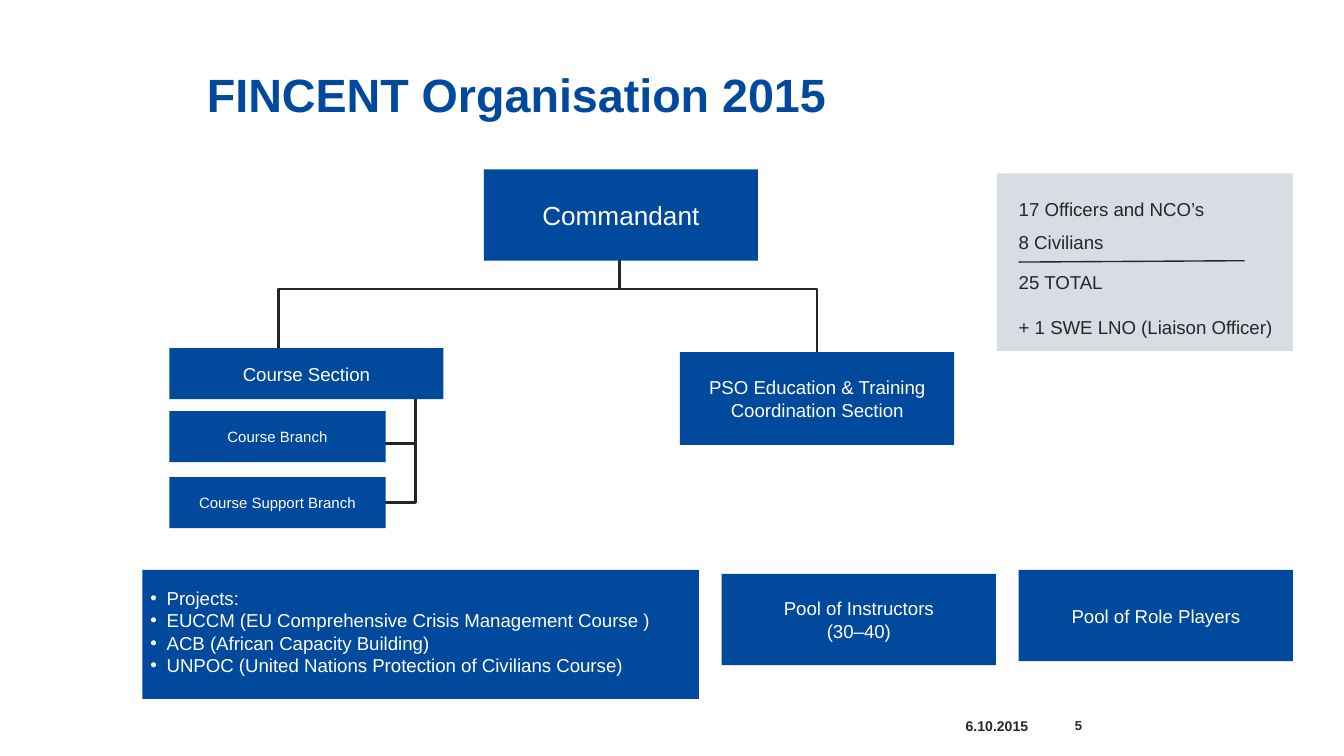
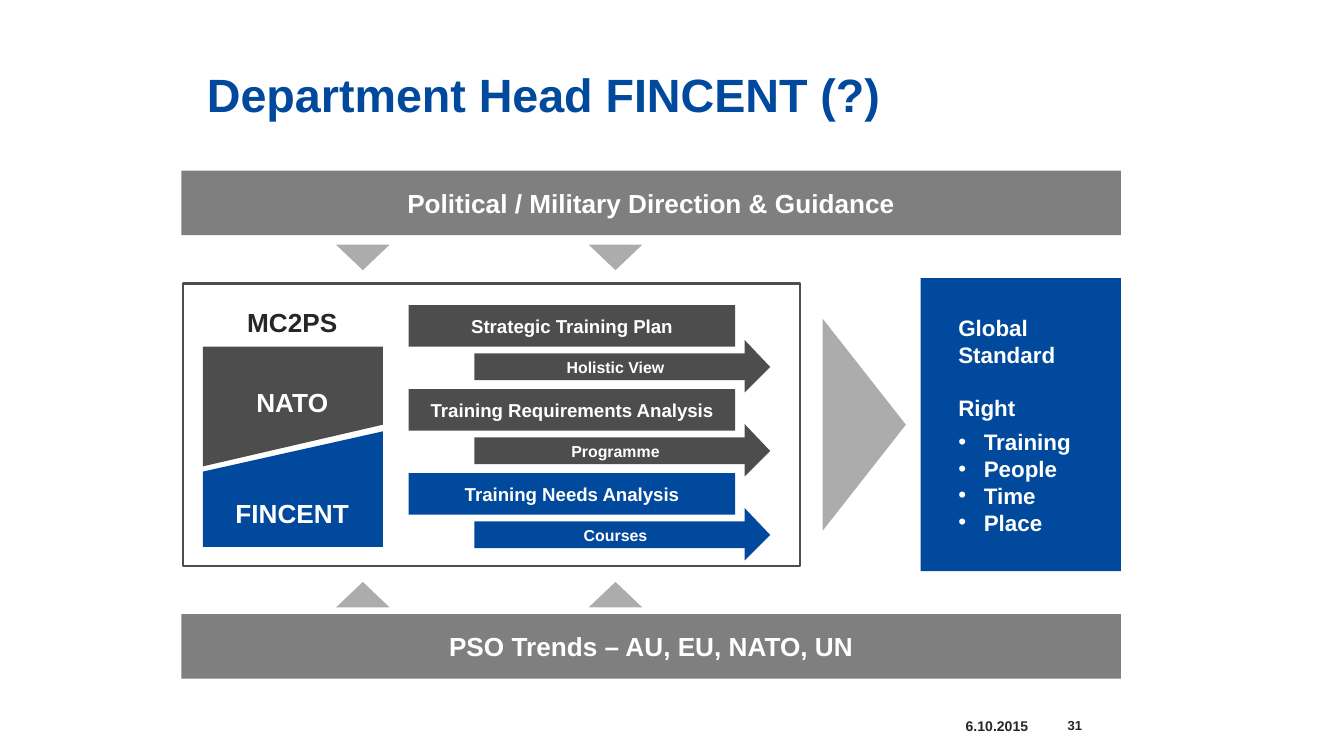
"""Build the two FINCENT slides: the organisation chart and the department head model."""
from lxml import etree
from pptx import Presentation
from pptx.dml.color import RGBColor
from pptx.enum.shapes import MSO_CONNECTOR, MSO_SHAPE
from pptx.enum.text import MSO_ANCHOR, MSO_AUTO_SIZE, PP_ALIGN
from pptx.oxml.ns import qn
from pptx.util import Inches, Pt

RECTANGLE = MSO_SHAPE.RECTANGLE
STRAIGHT = MSO_CONNECTOR.STRAIGHT
MIDDLE = MSO_ANCHOR.MIDDLE
FIXED = MSO_AUTO_SIZE.NONE
LEFT, CENTER, RIGHT = PP_ALIGN.LEFT, PP_ALIGN.CENTER, PP_ALIGN.RIGHT

FONT = "Arial"
BLUE, WHITE, INK = "01499C", "FFFFFF", "262626"
PANEL, BAND, DARK, ARROW = "D8DDE4", "7F7F7F", "4D4D4D", "ACACAC"
LINE_WIDTH = 1.42
DATE = "6.10.2015"


def color(value):
    """Turn a hex string into a colour."""
    return RGBColor.from_string(value)


def place(shape, left, top, width, height):
    """Move and size a shape."""
    shape.left, shape.top = Inches(left), Inches(top)
    shape.width, shape.height = Inches(width), Inches(height)


def paint(shape, fill):
    """Give a shape a plain fill without outline or shadow."""
    shape.shadow.inherit = False
    shape.fill.solid()
    shape.fill.fore_color.rgb = color(fill)
    shape.line.fill.background()


def stroke(line, width, value):
    """Set the width and colour of a line."""
    line.width = Pt(width)
    line.color.rgb = color(value)


def write(shape, lines, size, ink=WHITE, bold=False, align=CENTER, insets=(0.1, 0, 0.1, 0)):
    """Fill a shape with evenly formatted paragraphs and return them."""
    frame = shape.text_frame
    frame.text = "\n".join(lines)
    frame.word_wrap = True
    frame.auto_size = FIXED
    frame.vertical_anchor = MIDDLE
    frame.margin_left, frame.margin_top, frame.margin_right, frame.margin_bottom = map(Inches, insets)
    for para in frame.paragraphs:
        para.alignment = align
        para.space_before = Pt(0)
        for span in para.runs:
            span.font.name = FONT
            span.font.size = Pt(size)
            span.font.bold = bold
            span.font.color.rgb = color(ink)
    return frame.paragraphs


def set_bullet(para, indent):
    """Give a paragraph a hanging bullet, or none when the indent is zero."""
    properties = para._p.get_or_add_pPr()
    properties.set("marL", str(Inches(indent)))
    properties.set("indent", str(-Inches(indent)))
    if indent:
        etree.SubElement(properties, qn("a:buChar")).set("char", "•")
    else:
        etree.SubElement(properties, qn("a:buNone"))


def add_box(page, area, fill, lines=(), size=10, bold=False):
    """Add a filled rectangle with optional centred text."""
    box = page.shapes.add_shape(RECTANGLE, *map(Inches, area))
    paint(box, fill)
    if lines:
        write(box, lines, size, bold=bold)
    return box


def add_label(page, area, lines, size, **style):
    """Add a text box and return its paragraphs."""
    box = page.shapes.add_textbox(*map(Inches, area))
    return write(box, lines, size, **style)


def add_path(page, points, closed):
    """Add a freeform through points given in inches."""
    corners = [(Inches(x), Inches(y)) for x, y in points]
    builder = page.shapes.build_freeform(*corners[0])
    builder.add_line_segments(corners[1:], close=closed)
    return builder.convert_to_shape()


def add_polygon(page, points, fill):
    """Add a filled outline."""
    paint(add_path(page, points, True), fill)


def add_elbow(page, points):
    """Add an open line with corners."""
    path = add_path(page, points, False)
    path.shadow.inherit = False
    path.fill.background()
    stroke(path.line, LINE_WIDTH, INK)


def add_line(page, start, end, width=LINE_WIDTH):
    """Add a straight line."""
    line = page.shapes.add_connector(STRAIGHT, *map(Inches, start + end))
    stroke(line.line, width, INK)
    etree.SubElement(line._element.spPr, qn("a:effectLst"))


def add_page(deck, title, number):
    """Add a slide with its title and footer and return it with its body."""
    page = deck.slides.add_slide(deck.slide_layouts[1])
    heading = page.shapes.title
    place(heading, 1.38, 0.23, 8.12, 0.94)
    write(heading, [title], 25, BLUE, True, LEFT, (0.16, 0.05, 0.1, 0.05))
    add_label(page, (6.89, 5.25, 0.86, 0.3), [DATE], 7.5, ink=INK, bold=True, align=RIGHT)
    add_label(page, (7.75, 5.25, 0.4, 0.3), [number], 7, ink=INK, bold=True, align=RIGHT)
    return page, page.placeholders[1]


def add_staff_panel(page):
    """Add the panel that counts the staff."""
    add_box(page, (7.42, 1.29, 2.2, 1.32), PANEL)
    lines = ["17 Officers and NCO’s\v8 Civilians", "25 TOTAL", "+ 1 SWE LNO (Liaison Officer)"]
    paras = add_label(page, (7.58, 1.39, 1.92, 1.12), lines, 10, ink=INK, align=LEFT, insets=(0, 0, 0, 0))
    for para, gap in zip(paras, (0, 3, 6)):
        para.line_spacing = 1.5
        para.space_before = Pt(gap)
    add_line(page, (7.58, 1.95), (9.26, 1.94), 0.75)


def build_organisation(deck):
    """Build the organisation chart."""
    page, projects = add_page(deck, "FINCENT Organisation 2015", "5")
    place(projects, 1.06, 4.24, 4.14, 0.96)
    paint(projects, BLUE)
    lines = [
        "Projects:",
        "EUCCM (EU Comprehensive Crisis Management Course )",
        "ACB (African Capacity Building)",
        "UNPOC (United Nations Protection of Civilians Course)",
    ]
    for para in write(projects, lines, 10, align=LEFT, insets=(0.06, 0, 0, 0.04)):
        set_bullet(para, 0.12)

    add_line(page, (4.61, 2.15), (4.61, 1.6))
    add_elbow(page, [(2.07, 2.78), (2.07, 2.15), (6.08, 2.15), (6.08, 2.9)])
    add_elbow(page, [(3.09, 2.86), (3.09, 3.74), (2.75, 3.74)])
    add_line(page, (2.76, 3.3), (3.09, 3.3))

    units = [
        ((3.6, 1.26, 2.04, 0.68), 14, ["Commandant"]),
        ((1.26, 2.59, 2.04, 0.38), 10, ["Course Section"]),
        ((1.26, 3.06, 1.61, 0.38), 8, ["Course Branch"]),
        ((1.26, 3.55, 1.61, 0.38), 8, ["Course Support Branch"]),
        ((5.06, 2.62, 2.04, 0.69), 10, ["PSO Education & Training Coordination Section"]),
        ((5.37, 4.27, 2.04, 0.68), 10, ["Pool of Instructors", "(30–40)"]),
        ((7.58, 4.24, 2.04, 0.68), 10, ["Pool of Role Players"]),
    ]
    for area, size, lines in units:
        add_box(page, area, BLUE, lines, size)
    add_staff_panel(page)


def add_step(page, top, fill, step, result):
    """Add a planning step with the arrow that leaves it."""
    add_box(page, (3.04, top, 2.43, 0.31), fill, [step], 10, True)
    add_box(page, (3.53, top + 0.36, 2.1, 0.2), fill, [result], 8.5, True)
    add_polygon(page, [(5.54, top + 0.26), (5.73, top + 0.46), (5.54, top + 0.65)], fill)


def add_outcomes(body):
    """Turn the body into the panel of outcomes."""
    place(body, 6.85, 2.07, 1.49, 2.18)
    paint(body, BLUE)
    lines = ["Global Standard", "Right", "Training", "People", "Time", "Place"]
    paras = write(body, lines, 12, bold=True, align=LEFT, insets=(0.28, 0.05, 0.1, 0.05))
    for index, para in enumerate(paras):
        set_bullet(para, 0.19 if index > 1 else 0)
    paras[1].space_before = Pt(14)
    paras[2].space_before = Pt(4)


def build_department_head(deck):
    """Build the model of the department head's role."""
    page, body = add_page(deck, "Department Head FINCENT (?)", "31")
    add_outcomes(body)
    bands = [(1.27, "Political / Military Direction & Guidance"), (4.57, "PSO Trends – AU, EU, NATO, UN")]
    for top, text in bands:
        add_box(page, (1.35, top, 6.99, 0.48), BAND, [text], 14, True)
    for center in (2.7, 4.58):
        for base, tip in ((1.82, 2.01), (4.52, 4.33)):
            add_polygon(page, [(center - 0.2, base), (center + 0.2, base), (center, tip)], ARROW)
    add_polygon(page, [(6.12, 2.37), (6.74, 3.16), (6.12, 3.95)], ARROW)

    frame = add_box(page, (1.36, 2.11, 4.59, 2.1), WHITE)
    stroke(frame.line, 1.2, DARK)
    add_polygon(page, [(1.51, 2.58), (2.85, 2.58), (2.85, 3.16), (1.51, 3.47)], DARK)
    add_polygon(page, [(1.51, 4.07), (2.85, 4.07), (2.85, 3.21), (1.51, 3.51)], BLUE)
    for top, text, ink in ((2.23, "MC2PS", INK), (2.82, "NATO", WHITE), (3.65, "FINCENT", WHITE)):
        add_label(page, (1.56, top, 1.23, 0.34), [text], 14, ink=ink, bold=True)

    steps = [
        (DARK, "Strategic Training Plan", "Holistic View"),
        (DARK, "Training Requirements Analysis", "Programme"),
        (BLUE, "Training Needs Analysis", "Courses"),
    ]
    for index, (fill, step, result) in enumerate(steps):
        add_step(page, 2.27 + index * 1.25 / 2, fill, step, result)


def main():
    """Build and save the deck."""
    deck = Presentation()
    deck.slide_width = Inches(10)
    deck.slide_height = deck.slide_width * 9 // 16
    build_organisation(deck)
    build_department_head(deck)
    deck.save("out.pptx")


if __name__ == "__main__":
    main()
